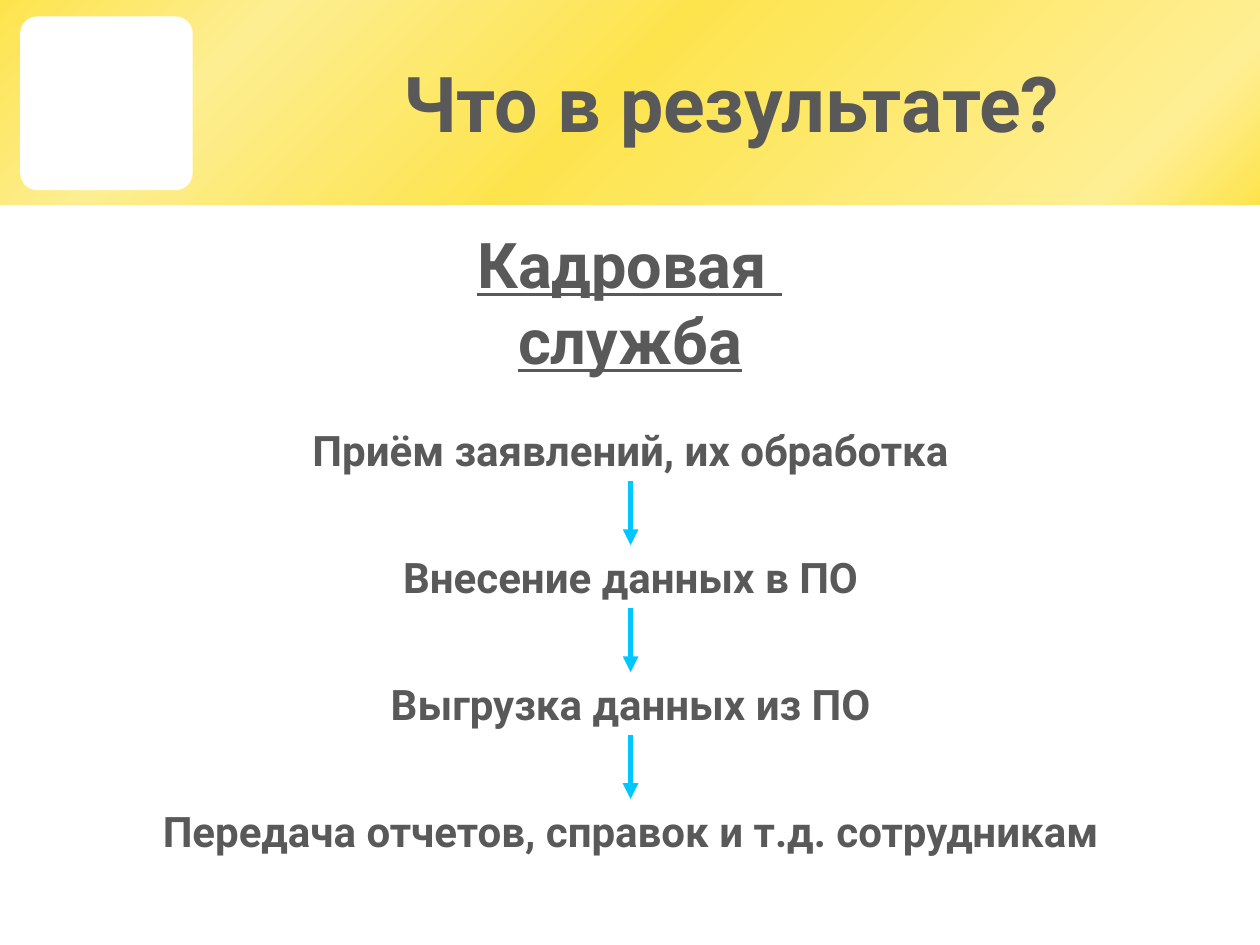
from lxml import etree
from pptx import Presentation
from pptx.dml.color import RGBColor as RGB
from pptx.enum.shapes import MSO_CONNECTOR as CONN, MSO_SHAPE as SHAPE
from pptx.enum.text import MSO_ANCHOR as ANCHOR, PP_ALIGN as ALIGN
from pptx.oxml import parse_xml
from pptx.oxml.ns import nsdecls, qn
from pptx.util import Inches, Pt

# Content
TITLE = "Что в результате?"
DEPARTMENT = "Кадровая \vслужба"
STEPS = [
    "Приём заявлений, их обработка",
    "Внесение данных в ПО",
    "Выгрузка данных из ПО",
    "Передача отчетов, справок и т.д. сотрудникам",
]

THEME = {
    "font": "Roboto",
    "text": "595959",
    "panel": "FFFFFF",
    "arrow": "00C7FF",
    "banner": [(0, "FDE44D"), (19, "FDEE91"), (48, "FDE44D"),
               (89, "FEEF94"), (100, "FDE44D")],
    "title_size": 44,
    "department_size": 36,
    "step_size": 24,
    "arrow_width": 3,
}

# Layout, in inches
WIDTH, HEIGHT = 10, 7.5
STEP_TOP, STEP_HEIGHT, STEP_PITCH = 3.32, 0.5, 1.007
STEP_LEFT, STEP_WIDTH = 0.5, 9.01
CENTER = STEP_LEFT + STEP_WIDTH / 2


def add_panel(s, kind, box):
    sp = s.shapes.add_shape(kind, *map(Inches, box))
    sp.shadow.inherit = False
    sp.line.fill.background()
    sp.fill.solid()
    sp.fill.fore_color.rgb = RGB.from_string(THEME["panel"])
    return sp


def set_gradient(sp, stops):
    gs = "".join(f'<a:gs pos="{pos * 1000}"><a:srgbClr val="{color}"/></a:gs>'
                 for pos, color in stops)
    grad = parse_xml(f'<a:gradFill {nsdecls("a")} rotWithShape="1"><a:gsLst>{gs}'
                     '</a:gsLst><a:lin ang="2700000" scaled="0"/></a:gradFill>')
    sp_pr = sp.fill._xPr
    sp_pr.replace(sp_pr.find(qn("a:solidFill")), grad)


def add_text(s, text, box, size, anchor=ANCHOR.TOP, **extra):
    tf = s.shapes.add_textbox(*map(Inches, box)).text_frame
    tf.word_wrap = True
    tf.vertical_anchor = anchor
    p = tf.paragraphs[0]
    p.text = text
    p.alignment = ALIGN.CENTER
    values = {"name": THEME["font"], "size": Pt(size), "bold": True, **extra}
    for r in p.runs:
        for key, value in values.items():
            setattr(r.font, key, value)
        r.font.color.rgb = RGB.from_string(THEME["text"])


def add_arrow(s, x, top, bottom):
    line = s.shapes.add_connector(CONN.STRAIGHT, *map(Inches, (x, top, x, bottom)))
    line.line.color.rgb = RGB.from_string(THEME["arrow"])
    line.line.width = Pt(THEME["arrow_width"])
    etree.SubElement(line.line._get_or_add_ln(), qn("a:tailEnd"), type="triangle")
    etree.SubElement(line._element.spPr, qn("a:effectLst"))


def main():
    prs = Presentation()
    prs.slide_width, prs.slide_height = Inches(WIDTH), Inches(HEIGHT)
    s = prs.slides.add_slide(prs.slide_layouts[6])

    # Banner with the emblem panel and title
    banner = add_panel(s, SHAPE.RECTANGLE, (0, 0, WIDTH, 1.62))
    set_gradient(banner, THEME["banner"])
    emblem = add_panel(s, SHAPE.ROUNDED_RECTANGLE, (0.16, 0.13, 1.37, 1.38))
    emblem.adjustments[0] = 0.1
    add_text(s, TITLE, (1.69, 0.18, 8.23, 1.25), THEME["title_size"], ANCHOR.MIDDLE)

    # Department heading
    add_text(s, DEPARTMENT, (3.19, 1.74, 3.62, 1.31), THEME["department_size"],
             underline=True)

    # Steps, each joined to the next by an arrow
    for i, step in enumerate(STEPS):
        top = STEP_TOP + i * STEP_PITCH
        add_text(s, step, (STEP_LEFT, top, STEP_WIDTH, STEP_HEIGHT),
                 THEME["step_size"])
        if i < len(STEPS) - 1:
            add_arrow(s, CENTER, top + STEP_HEIGHT, top + STEP_PITCH)

    prs.save("out.pptx")


if __name__ == "__main__":
    main()
